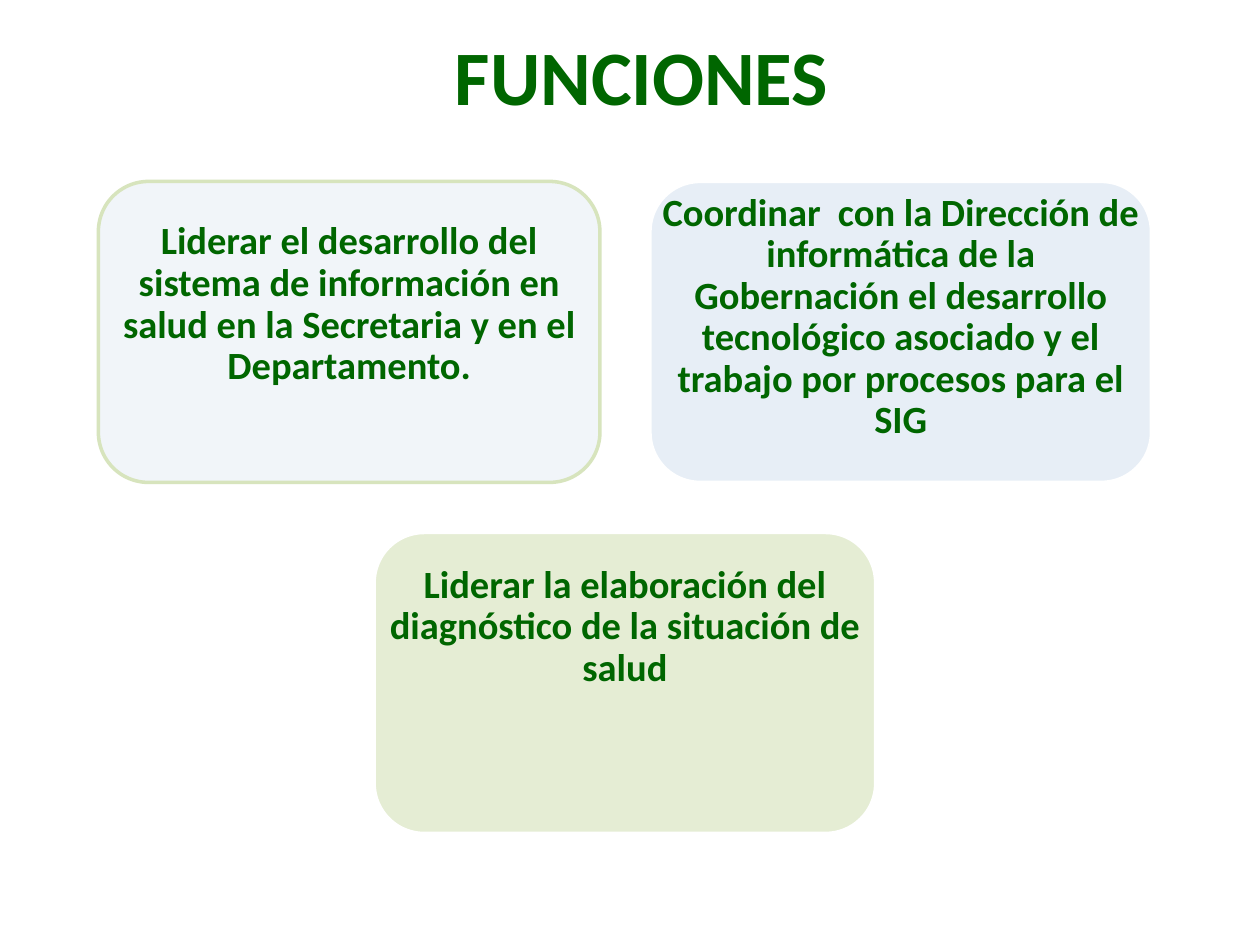
import pptx
import pptx.util
import pptx.dml.color
import pptx.enum.shapes
import pptx.enum.text
import pptx.oxml.ns
import lxml.etree

Pt = pptx.util.Pt

# Content
TITLE = "FUNCIONES"
COLORS = {"text": "006600", "blue": "DCE6F2", "green": "D7E4BD", "white": "FFFFFF"}
# text, fill, opacity in percent, line, row, column, space above the text
FUNCTIONS = [
    ("Liderar el desarrollo del sistema de información en salud en la Secretaria "
     "y en el Departamento.", "blue", 40, "green", 0, 0, 23),
    ("Coordinar  con la Dirección de informática de la Gobernación el desarrollo "
     "tecnológico asociado y el trabajo por procesos para el SIG",
     "blue", 67, "white", 0, 1, 6.5),
    ("Liderar la elaboración del diagnóstico de la situación de salud",
     "green", 64, "white", 1, 0.5, 18.5),
]

# Grid of cards; the last one is centred under the first row
LEFT, TOP = 56.2, 103.7
WIDTH, HEIGHT = 286.6, 172
GAP = 28.6
INSET = 6.5


def color(name):
    return pptx.dml.color.RGBColor.from_string(COLORS[name])


def write_text(shape, text, size, anchor, line_spacing=1.0, top=INSET):
    frame = shape.text_frame
    frame.word_wrap = True
    frame.auto_size = pptx.enum.text.MSO_AUTO_SIZE.NONE
    frame.vertical_anchor = anchor
    frame.margin_left = frame.margin_right = frame.margin_bottom = Pt(INSET)
    frame.margin_top = Pt(top)
    paragraph = frame.paragraphs[0]
    paragraph.alignment = pptx.enum.text.PP_ALIGN.CENTER
    paragraph.line_spacing = line_spacing
    run = paragraph.add_run()
    run.text = text
    run.font.name = "Calibri"
    run.font.size = Pt(size)
    run.font.bold = True
    run.font.color.rgb = color("text")


def add_card(slide, text, fill, opacity, line, row, column, top):
    box = (Pt(LEFT + column * (WIDTH + GAP)), Pt(TOP + row * (HEIGHT + GAP)),
           Pt(WIDTH), Pt(HEIGHT))
    card = slide.shapes.add_shape(
        pptx.enum.shapes.MSO_SHAPE.ROUNDED_RECTANGLE, *box)
    card.shadow.inherit = False
    card.fill.solid()
    card.fill.fore_color.rgb = color(fill)
    fill_color = card.fill._xPr.find(".//" + pptx.oxml.ns.qn("a:srgbClr"))
    lxml.etree.SubElement(fill_color, pptx.oxml.ns.qn("a:alpha"),
                          val=str(opacity * 1000))
    card.line.color.rgb = color(line)
    card.line.width = Pt(2)
    # The label spans the full card, beyond the inset of the round corners
    label = slide.shapes.add_textbox(*box)
    write_text(label, text, size=22, anchor=pptx.enum.text.MSO_ANCHOR.TOP,
               line_spacing=0.9, top=top)


def main():
    presentation = pptx.Presentation()
    presentation.slide_width, presentation.slide_height = Pt(720), Pt(540)
    slide = presentation.slides.add_slide(presentation.slide_layouts[5])

    # Title
    title = slide.shapes.title
    title.left, title.top, title.width, title.height = (
        Pt(44.6), Pt(11.5), Pt(644.4), Pt(62.6))
    write_text(title, TITLE, size=44, anchor=pptx.enum.text.MSO_ANCHOR.MIDDLE)

    # Cards
    for function in FUNCTIONS:
        add_card(slide, *function)

    presentation.save("out.pptx")


if __name__ == "__main__":
    main()
